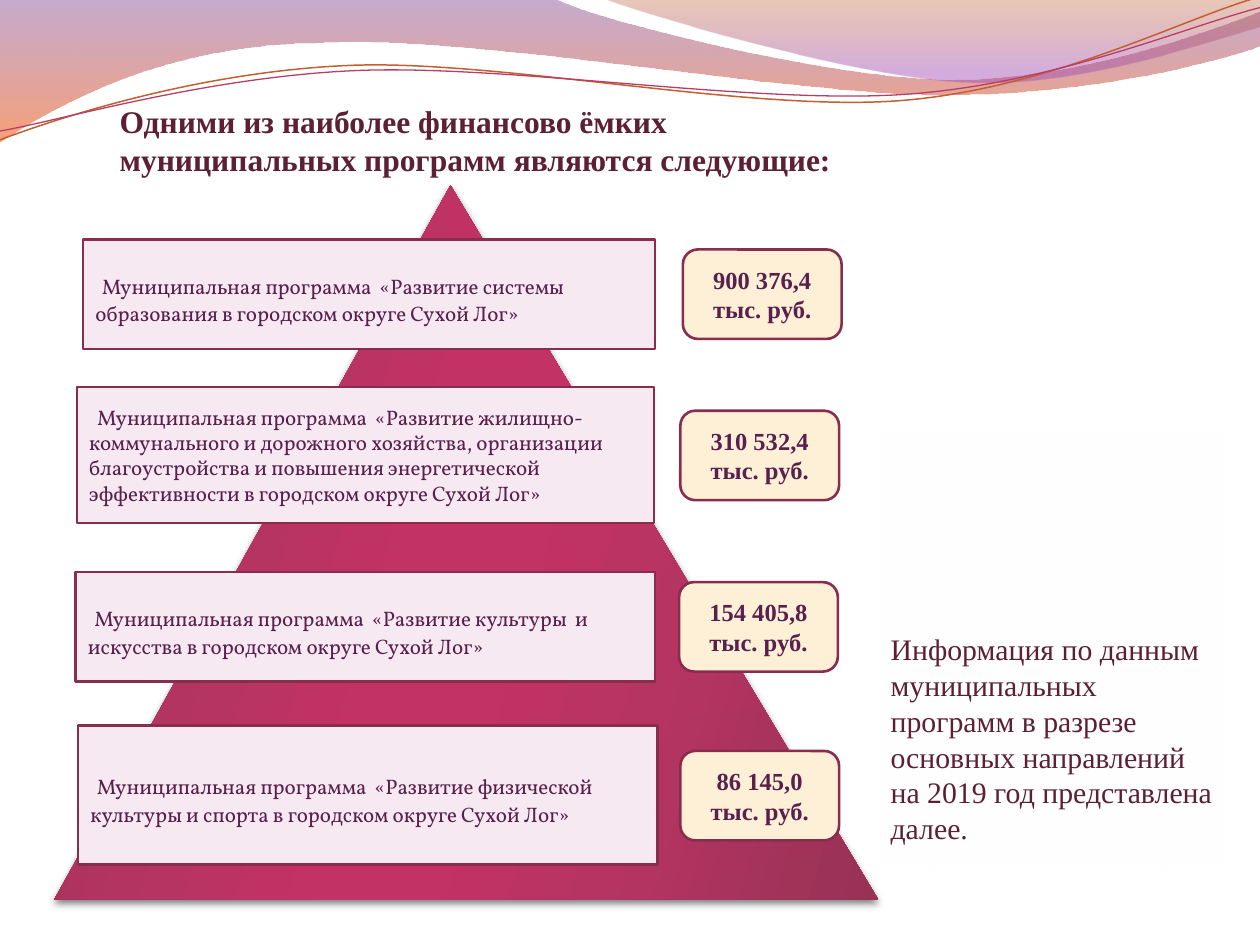
from dataclasses import dataclass
from math import cos, radians, sin
from typing import NamedTuple

from lxml.etree import SubElement
from pptx import Presentation
from pptx.dml.color import RGBColor
from pptx.enum.shapes import MSO_SHAPE
from pptx.enum.text import MSO_ANCHOR, PP_ALIGN
from pptx.oxml.ns import qn
from pptx.util import Inches, Pt


@dataclass(frozen=True)
class Theme:
    serif: str = "Times New Roman"
    body: str = "Vollkorn"
    heading: str = "5C1F34"
    text: str = "591F4D"
    lead: str = "FFFFFF"
    outline: str = "882D4D"
    program_fill: str = "F7E9F1"
    amount_fill: str = "FEF0D7"
    title_size: float = 18
    note_size: float = 17
    amount_size: float = 14
    program_size: float = 12
    outline_width: float = 1.5


class Stop(NamedTuple):
    position: int
    color: str
    alpha: int = 100


class Program(NamedTuple):
    name: str
    amount: str
    box: tuple
    amount_at: tuple
    lead_size: float = 18
    indent: float = 0


class Wave(NamedTuple):
    """Point pairs are straight steps, six numbers are a Bezier step."""
    place: tuple
    start: tuple
    steps: list
    fill: tuple = ()
    line: tuple = ()
    turn: float = 0


THEME = Theme()
AMOUNT_WIDTH, AMOUNT_HEIGHT = 1.26, 0.71
WHITE_STOPS = (Stop(0, "FFFFFF"), Stop(100, "FFFFFF", 6))
PYRAMID_STOPS = (Stop(0, "973255"), Stop(30, "B63462"), Stop(45, "C33265"),
                 Stop(55, "C33265"), Stop(73, "B63462"), Stop(100, "973255"))
WAVES = [
    Wave((-0.01, -0.01, 10.02, 1.14), (0, -0.01),
         [(4.4, -0.01), (4.76, 0.17, 6.64, 0.63, 7.58, 0.63),
          (8.53, 0.63, 9.58, 0.26, 10, 0.09), (10.01, 0.36),
          (9.83, 0.44, 8.7, 0.76, 7.46, 0.75), (6.22, 0.75, 3.82, 0.28, 2.57, 0.34),
          (1.29, 0.35, 0.46, 0.83, -0.01, 1.13), (0, -0.01)],
         fill=(Stop(0, "834591", 45), Stop(100, "F35307", 55))),
    Wave((4.79, -0.01, 5.21, 0.7), (4.79, -0.01),
         [(5.09, 0.11, 6.82, 0.62, 7.69, 0.65), (8.56, 0.69, 9.61, 0.32, 10, 0.21),
          (10, 0), (4.79, -0.01)],
         fill=(Stop(0, "B74915", 30), Stop(80, "A14BB4", 45))),
    Wave((-0.02, 0.22, 10.02, 0.71), (0, 1.11),
         [(0.48, 0.93, 1.58, 0.57, 2.77, 0.52), (3.95, 0.47, 5.93, 0.89, 7.13, 0.8),
          (8.33, 0.71, 9.38, 0.15, 9.98, -0.02)], line=("C45F30", 0.85), turn=-2.7),
    Wave((-0.02, 0.3, 10.03, 0.58), (0, 1.04),
         [(0.47, 0.96, 1.64, 0.61, 2.83, 0.56), (4.03, 0.51, 5.97, 0.83, 7.17, 0.75),
          (8.36, 0.67, 9.41, 0.21, 10, 0.06)], line=("B83D68", 0.75), turn=-2.7),
]
PROGRAMS = [
    Program("Муниципальная программа  «Развитие системы образования в городском "
            "округе Сухой Лог»", "900 376,4\nтыс. руб.",
            (0.66, 1.9, 4.54, 0.87), (5.42, 1.98)),
    Program("Муниципальная программа  «Развитие жилищно-коммунального и дорожного "
            "хозяйства, организации благоустройства и повышения энергетической "
            "эффективности в городском округе Сухой Лог»", "310 532,4\nтыс. руб.",
            (0.61, 3.07, 4.58, 1.08), (5.4, 3.26), lead_size=12, indent=0.03),
    Program("Муниципальная программа  «Развитие культуры  и искусства в городском "
            "округе Сухой Лог»", "154 405,8\nтыс. руб.",
            (0.6, 4.54, 4.6, 0.87), (5.39, 4.62)),
    Program("Муниципальная программа  «Развитие физической культуры и спорта в "
            "городском округе Сухой Лог»", "86 145,0 тыс. руб.",
            (0.62, 5.76, 4.6, 1.1), (5.4, 5.96)),
]


def add_color(parent, color: str, alpha: int) -> None:
    node = SubElement(parent, qn("a:srgbClr"), val=color)
    if alpha < 100:
        SubElement(node, qn("a:alpha"), val=str(alpha * 1000))


def fill_gradient(shape, stops: tuple, angle: int) -> None:
    shape.fill.gradient()
    gradient = shape._element.spPr.find(qn("a:gradFill"))
    for child in list(gradient):
        gradient.remove(child)
    stop_list = SubElement(gradient, qn("a:gsLst"))
    for stop in stops:
        node = SubElement(stop_list, qn("a:gs"), pos=str(stop.position * 1000))
        add_color(node, stop.color, stop.alpha)
    SubElement(gradient, qn("a:lin"), ang=str(angle * 60000), scaled="0")


def add_step(outline, tag: str, wave: Wave, numbers: tuple) -> None:
    """Append one outline step, in the coordinates of the unturned shape."""
    left, top, width, height = wave.place
    angle = radians(-wave.turn)
    step = SubElement(outline, qn(tag))
    for x, y in zip(numbers[::2], numbers[1::2]):
        dx, dy = x - left - width / 2, y - top - height / 2
        local_x = dx * cos(angle) - dy * sin(angle) + width / 2
        local_y = dx * sin(angle) + dy * cos(angle) + height / 2
        SubElement(step, qn("a:pt"), x=str(Inches(local_x)), y=str(Inches(local_y)))


def add_wave(page, wave: Wave) -> None:
    left, top, width, height = map(Inches, wave.place)
    builder = page.shapes.build_freeform(left, top)
    builder.add_line_segments([(left + width, top + height)], close=False)
    shape = builder.convert_to_shape()
    shape.shadow.inherit = False
    shape.rotation = wave.turn

    # Exchange the straight diagonal for true curves
    outline = next(shape._element.iter(qn("a:path")))
    for child in list(outline):
        outline.remove(child)
    add_step(outline, "a:moveTo", wave, wave.start)
    for numbers in wave.steps:
        add_step(outline, "a:lnTo" if len(numbers) == 2 else "a:cubicBezTo", wave, numbers)

    if wave.fill:
        SubElement(outline, qn("a:close"))
        fill_gradient(shape, wave.fill, 90)
        shape.line.fill.background()
    else:
        color, line_width = wave.line
        shape.fill.background()
        shape.line.color.rgb = RGBColor.from_string(color)
        shape.line.width = Pt(line_width)


def add_pyramid(page) -> None:
    shape = page.shapes.add_shape(MSO_SHAPE.ISOSCELES_TRIANGLE, Inches(0.43),
                                  Inches(1.47), Inches(6.54), Inches(5.67))
    shape.adjustments[0] = 0.481
    shape.line.fill.background()
    fill_gradient(shape, PYRAMID_STOPS, 16)
    shape.shadow.inherit = False
    effects = shape._element.spPr.find(qn("a:effectLst"))
    shadow = SubElement(effects, qn("a:outerShdw"), blurRad=str(Pt(4)), dist=str(Pt(2)),
                        dir="5400000", rotWithShape="0")
    add_color(shadow, "000000", 50)


def add_panel(page, kind, place: tuple, fill: str):
    shape = page.shapes.add_shape(kind, *map(Inches, place))
    shape.shadow.inherit = False
    shape.fill.solid()
    shape.fill.fore_color.rgb = RGBColor.from_string(fill)
    shape.line.color.rgb = RGBColor.from_string(THEME.outline)
    shape.line.width = Pt(THEME.outline_width)
    return shape


def write(box, text: str, font: str, size: float, color: str, bold: bool = False,
          align=PP_ALIGN.LEFT, anchor=MSO_ANCHOR.MIDDLE) -> None:
    frame = box.text_frame
    frame.word_wrap = True
    frame.vertical_anchor = anchor
    frame.text = text
    for para in frame.paragraphs:
        para.alignment = align
        para.font.name, para.font.size, para.font.bold = font, Pt(size), bold
        para.font.color.rgb = RGBColor.from_string(color)


def add_program(page, program: Program) -> None:
    box = add_panel(page, MSO_SHAPE.RECTANGLE, program.box, THEME.program_fill)
    write(box, " ", THEME.body, THEME.program_size, THEME.text)
    para = box.text_frame.paragraphs[0]
    para._p.get_or_add_pPr().set("indent", str(Inches(program.indent)))
    lead = para.runs[0]
    lead.font.size = Pt(program.lead_size)
    lead.font.color.rgb = RGBColor.from_string(THEME.lead)
    para.add_run().text = program.name

    place = (*program.amount_at, AMOUNT_WIDTH, AMOUNT_HEIGHT)
    amount = add_panel(page, MSO_SHAPE.ROUNDED_RECTANGLE, place, THEME.amount_fill)
    write(amount, program.amount, THEME.serif, THEME.amount_size, THEME.text,
          bold=True, align=PP_ALIGN.CENTER)


def main() -> None:
    deck = Presentation()
    deck.slide_width, deck.slide_height = Inches(10), Inches(7.5)
    page = deck.slides.add_slide(deck.slide_layouts[6])

    # Decorative waves and the pyramid
    for wave in WAVES:
        add_wave(page, wave)
    add_pyramid(page)

    # Programs with their amounts
    for program in PROGRAMS:
        add_program(page, program)

    # Heading
    title = page.shapes.add_textbox(Inches(0.51), Inches(0.76), Inches(6.56), Inches(0.87))
    title.text_frame.margin_left = Inches(0.44)
    title.text_frame.margin_right = title.text_frame.margin_bottom = 0
    write(title, "Одними из наиболее финансово ёмких\v"
          "муниципальных программ являются следующие:", THEME.serif,
          THEME.title_size, THEME.heading, bold=True, anchor=MSO_ANCHOR.TOP)

    # Side note
    note = page.shapes.add_shape(MSO_SHAPE.RECTANGLE, Inches(6.97), Inches(3.39),
                                 Inches(2.76), Inches(3.51))
    note.shadow.inherit = False
    note.line.fill.background()
    fill_gradient(note, WHITE_STOPS, 90)
    note.text_frame.margin_bottom = Inches(0.19)
    write(note, "Информация по данным муниципальных программ в разрезе основных "
          "направлений на 2019 год представлена далее.", THEME.serif,
          THEME.note_size, THEME.heading, anchor=MSO_ANCHOR.BOTTOM)

    deck.save("out.pptx")


if __name__ == "__main__":
    main()
